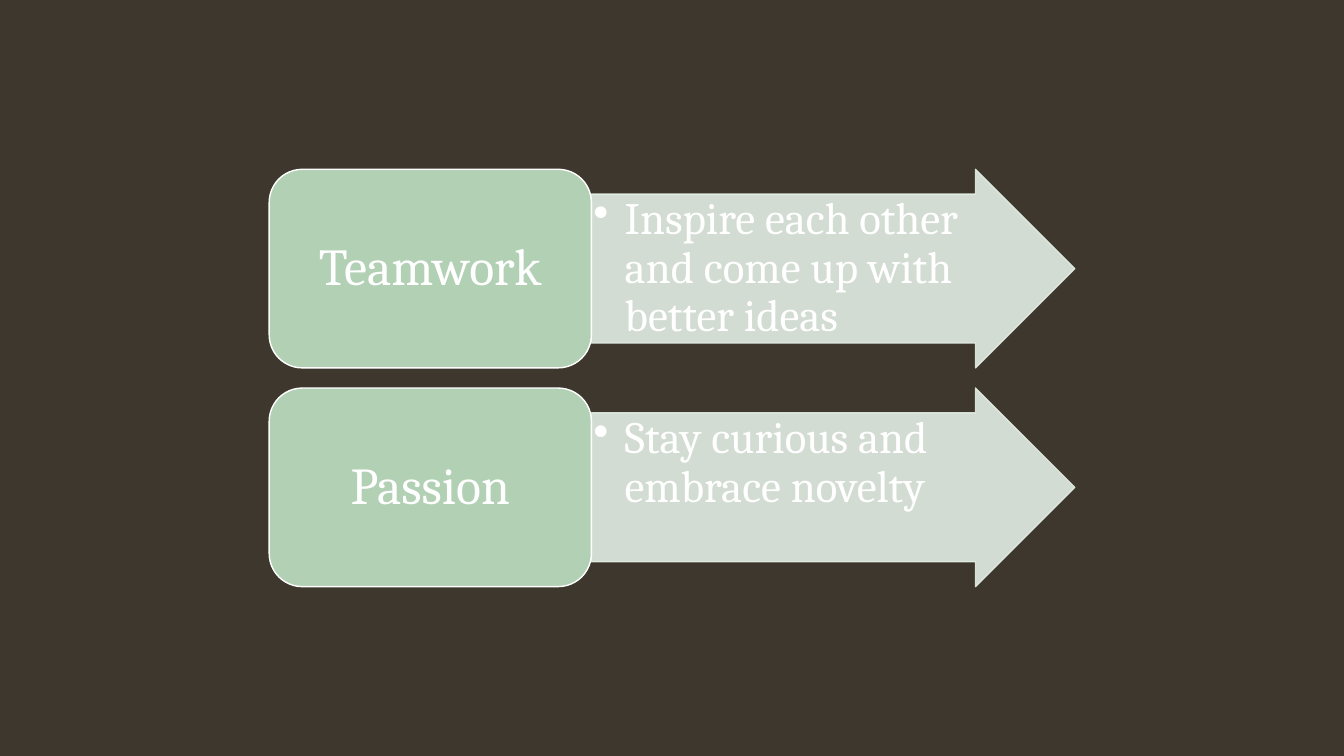
import pptx
import pptx.dml.color
import pptx.enum.shapes
import pptx.enum.text
import pptx.oxml.ns
import pptx.oxml.xmlchemy
import pptx.util

Inches = pptx.util.Inches
Pt = pptx.util.Pt
RGBColor = pptx.dml.color.RGBColor
MSO_SHAPE = pptx.enum.shapes.MSO_SHAPE
PP_ALIGN = pptx.enum.text.PP_ALIGN
MSO_ANCHOR = pptx.enum.text.MSO_ANCHOR
OxmlElement = pptx.oxml.xmlchemy.OxmlElement

BACKGROUND = RGBColor(0x3D, 0x37, 0x2E)
GREEN = RGBColor(0xB2, 0xD0, 0xB4)
PALE_GREEN = RGBColor(0xE4, 0xEE, 0xE5)
WHITE = RGBColor(0xFF, 0xFF, 0xFF)
FONT = "Cambria"

VALUES = [
    ("Teamwork", "Inspire each other and come up with better ideas"),
    ("Passion", "Stay curious and embrace novelty"),
]
ROW_HEIGHT = 1.97
ROW_PITCH = 2.17
LABEL_SHARE = 0.4


def add_block(slide, kind, box, fill, line, text, size, margins):
    shape = slide.shapes.add_shape(kind, *[Inches(length) for length in box])
    shape.shadow.inherit = False
    shape.fill.solid()
    shape.fill.fore_color.rgb = fill
    shape.line.color.rgb = line
    shape.line.width = Pt(1)
    frame = shape.text_frame
    frame.word_wrap = True
    frame.margin_left = frame.margin_right = Inches(margins[0])
    frame.margin_top = frame.margin_bottom = Inches(margins[1])
    frame.text = text
    paragraph = frame.paragraphs[0]
    paragraph.line_spacing = 0.9
    font = paragraph.runs[0].font
    font.name = FONT
    font.size = Pt(size)
    font.color.rgb = WHITE
    return shape


def make_translucent(shape, percent):
    for color in shape._element.spPr.iter(pptx.oxml.ns.qn("a:srgbClr")):
        alpha = OxmlElement("a:alpha")
        alpha.set("val", str(percent * 1000))
        color.append(alpha)


def add_bullet(paragraph, indent):
    properties = paragraph._p.get_or_add_pPr()
    properties.set("marL", str(Inches(indent)))
    properties.set("indent", str(-Inches(indent)))
    bullet = OxmlElement("a:buChar")
    bullet.set("char", "•")
    properties.append(bullet)


def add_value_row(slide, box, label, description):
    left, top, width, height = box
    label_width = width * LABEL_SHARE
    arrow_box = (left + label_width, top, width - label_width, height)
    arrow = add_block(slide, MSO_SHAPE.RIGHT_ARROW, arrow_box, PALE_GREEN,
                      PALE_GREEN, description, 32, (0.02, 0.02))
    arrow.adjustments[0] = 0.75
    arrow.adjustments[1] = 0.5
    make_translucent(arrow, 90)
    arrow.text_frame.vertical_anchor = MSO_ANCHOR.TOP
    paragraph = arrow.text_frame.paragraphs[0]
    paragraph.level = 1
    paragraph.alignment = PP_ALIGN.LEFT
    add_bullet(paragraph, 0.31)

    label_box = (left, top, label_width, height)
    card = add_block(slide, MSO_SHAPE.ROUNDED_RECTANGLE, label_box, GREEN,
                     WHITE, label, 37, (0.15, 0.08))
    card.text_frame.vertical_anchor = MSO_ANCHOR.MIDDLE
    card.text_frame.paragraphs[0].alignment = PP_ALIGN.CENTER


def add_values_slide(presentation, left, top, width):
    slide = presentation.slides.add_slide(presentation.slide_layouts[6])
    slide.background.fill.solid()
    slide.background.fill.fore_color.rgb = BACKGROUND
    for index, (label, description) in enumerate(VALUES):
        box = (left, top + index * ROW_PITCH, width, ROW_HEIGHT)
        add_value_row(slide, box, label, description)


def main():
    presentation = pptx.Presentation()
    presentation.slide_width = Inches(13.33)
    presentation.slide_height = Inches(7.5)
    add_values_slide(presentation, 2.67, 1.68, 7.99)
    presentation.save("out.pptx")


if __name__ == "__main__":
    main()
